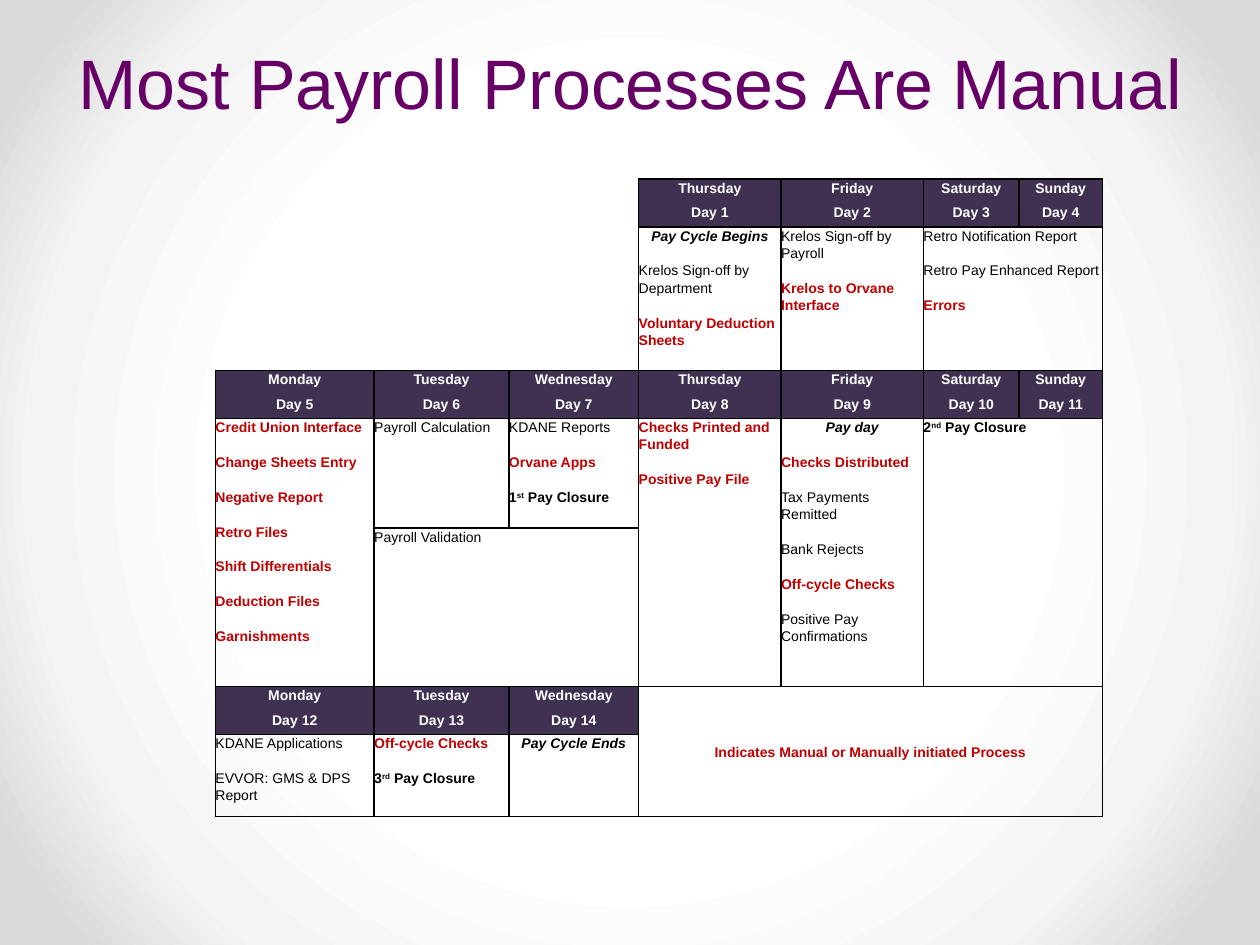
from lxml import etree
from pptx import Presentation
from pptx.dml.color import RGBColor
from pptx.enum.text import MSO_ANCHOR, PP_ALIGN
from pptx.oxml import parse_xml
from pptx.oxml.ns import nsdecls, qn
from pptx.util import Inches, Pt

CENTER, LEFT = PP_ALIGN.CENTER, PP_ALIGN.LEFT
TOP, MIDDLE, BOTTOM = MSO_ANCHOR.TOP, MSO_ANCHOR.MIDDLE, MSO_ANCHOR.BOTTOM
PURPLE, HEADER, WHITE, BLACK, RED = "660066", "403152", "FFFFFF", "000000", "C00000"

# style: colour, bold, italic, alignment
STYLES = {
    "header": (WHITE, True, False, CENTER),
    "plain": (BLACK, False, False, LEFT),
    "manual": (RED, True, False, LEFT),
    "closure": (BLACK, True, False, LEFT),
    "event": (BLACK, True, True, CENTER),
    "legend": (RED, True, False, CENTER),
}
COLUMN_WIDTHS = [1.26, 1.07, 1.03, 1.13, 1.13, 0.76, 0.66]
ROW_HEIGHTS = [0.38, 1.14, 0.38, 0.87, 1.26, 0.38, 0.65]
MERGES = [(0, 0, 1, 2), (1, 5, 1, 6), (3, 0, 4, 0), (3, 3, 4, 3), (3, 4, 4, 4),
          (3, 5, 4, 6), (4, 1, 4, 2), (5, 3, 6, 6)]
WEEKDAYS = ["Monday", "Tuesday", "Wednesday", "Thursday", "Friday", "Saturday", "Sunday"]
HEADER_ROWS = {0: range(1, 5), 2: range(5, 12), 5: range(12, 15)}
TASKS = {
    (1, 3): [("event", "Pay Cycle Begins"),
             ("plain", "Krelos Sign-off by Department"),
             ("manual", "Voluntary Deduction Sheets")],
    (1, 4): [("plain", "Krelos Sign-off by Payroll"),
             ("manual", "Krelos to Orvane Interface")],
    (1, 5): [("plain", "Retro Notification Report"),
             ("plain", "Retro Pay Enhanced Report"),
             ("manual", "Errors")],
    (3, 0): [("manual", "Credit Union Interface"), ("manual", "Change Sheets Entry"),
             ("manual", "Negative Report"), ("manual", "Retro Files"),
             ("manual", "Shift Differentials"), ("manual", "Deduction Files"),
             ("manual", "Garnishments")],
    (3, 1): [("plain", "Payroll Calculation")],
    (3, 2): [("plain", "KDANE Reports"), ("manual", "Orvane Apps"),
             ("closure", "1^st^ Pay Closure")],
    (3, 3): [("manual", "Checks Printed and Funded"), ("manual", "Positive Pay File")],
    (3, 4): [("event", "Pay day"), ("manual", "Checks Distributed"),
             ("plain", "Tax Payments Remitted"), ("plain", "Bank Rejects"),
             ("manual", "Off-cycle Checks"), ("plain", "Positive Pay Confirmations")],
    (3, 5): [("closure", "2^nd^ Pay Closure")],
    (4, 1): [("plain", "Payroll Validation")],
    (5, 3): [("legend", "Indicates Manual or Manually initiated Process")],
    (6, 0): [("plain", "KDANE Applications"), ("plain", "EVVOR: GMS & DPS Report")],
    (6, 1): [("manual", "Off-cycle Checks"), ("closure", "3^rd^ Pay Closure")],
    (6, 2): [("event", "Pay Cycle Ends")],
}
for row, days in HEADER_ROWS.items():
    for day in days:
        column = (day + 2) % 7
        TASKS[row, column] = [("header", WEEKDAYS[column]), ("header", f"Day {day}")]


def rgb(value):
    return RGBColor.from_string(value)


def set_border(cell, side, visible):
    line = etree.SubElement(cell._tc.get_or_add_tcPr(), qn(f"a:ln{side}"), w=str(Pt(1)))
    if visible:
        fill = etree.SubElement(line, qn("a:solidFill"))
        etree.SubElement(fill, qn("a:srgbClr"), val=BLACK)
    else:
        etree.SubElement(line, qn("a:noFill"))


deck = Presentation()
deck.slide_width, deck.slide_height = Inches(10), Inches(7.5)
page = deck.slides.add_slide(deck.slide_layouts[5])

stops = "".join(
    f'<a:gs pos="{position}000"><a:srgbClr val="{color}"/></a:gs>'
    for position, color in [(50, WHITE), (76, "F4F4F4"), (92, "DADADA")])
page._element.cSld.insert(0, parse_xml(
    f'<p:bg {nsdecls("p", "a")}><p:bgPr><a:gradFill rotWithShape="1"><a:gsLst>{stops}</a:gsLst>'
    '<a:path path="circle"><a:fillToRect l="50000" t="50000" r="50000" b="50000"/></a:path>'
    '</a:gradFill><a:effectLst/></p:bgPr></p:bg>'))

title = page.shapes.title
title.left, title.top, title.width, title.height = map(Inches, (0.5, 0, 9, 1.03))
title.text_frame.text = "Most Payroll Processes Are Manual"
title.text_frame.vertical_anchor = BOTTOM
para = title.text_frame.paragraphs[0]
para.alignment, para.line_spacing = CENTER, Pt(58)
font = para.runs[0].font
font.name, font.size, font.color.rgb = "Arial", Pt(40), rgb(PURPLE)

calendar = page.shapes.add_table(
    len(ROW_HEIGHTS), len(COLUMN_WIDTHS), Inches(1.71), Inches(1.42),
    Inches(sum(COLUMN_WIDTHS)), Inches(sum(ROW_HEIGHTS))).table
calendar.first_row = calendar.horz_banding = False
for column, width in zip(calendar.columns, COLUMN_WIDTHS):
    column.width = Inches(width)
for row, height in zip(calendar.rows, ROW_HEIGHTS):
    row.height = Inches(height)
for top, left, bottom, right in MERGES:
    calendar.cell(top, left).merge(calendar.cell(bottom, right))

for row in range(len(ROW_HEIGHTS)):
    for column in range(len(COLUMN_WIDTHS)):
        cell = calendar.cell(row, column)
        cell.margin_left = cell.margin_right = cell.margin_top = cell.margin_bottom = 0
        cell.vertical_anchor = MIDDLE if (row, column) == (5, 3) else TOP
        open_corner = row < 2 and column < 3
        for side in "LRTB":
            set_border(cell, side, side in "RB" or not open_corner)
        entries = TASKS.get((row, column), [])
        if entries and entries[0][0] == "header":
            cell.fill.solid()
            cell.fill.fore_color.rgb = rgb(HEADER)
        else:
            cell.fill.background()

        for index, (style, text) in enumerate(entries):
            color, bold, italic, alignment = STYLES[style]
            frame = cell.text_frame
            para = frame.add_paragraph() if index else frame.paragraphs[0]
            para.alignment, para.line_spacing = alignment, 1.1
            if style == "header":
                para.space_before = para.space_after = Pt(2)
            elif index:
                para.space_before = Pt(10)
            for part, piece in enumerate(text.split("^")):
                span = para.add_run()
                span.text = piece
                font = span.font
                font.name, font.size, font.color.rgb = "Arial", Pt(8), rgb(color)
                font.bold, font.italic = bold, italic
                if part == 1:
                    span._r.get_or_add_rPr().set("baseline", "30000")

deck.save("out.pptx")
